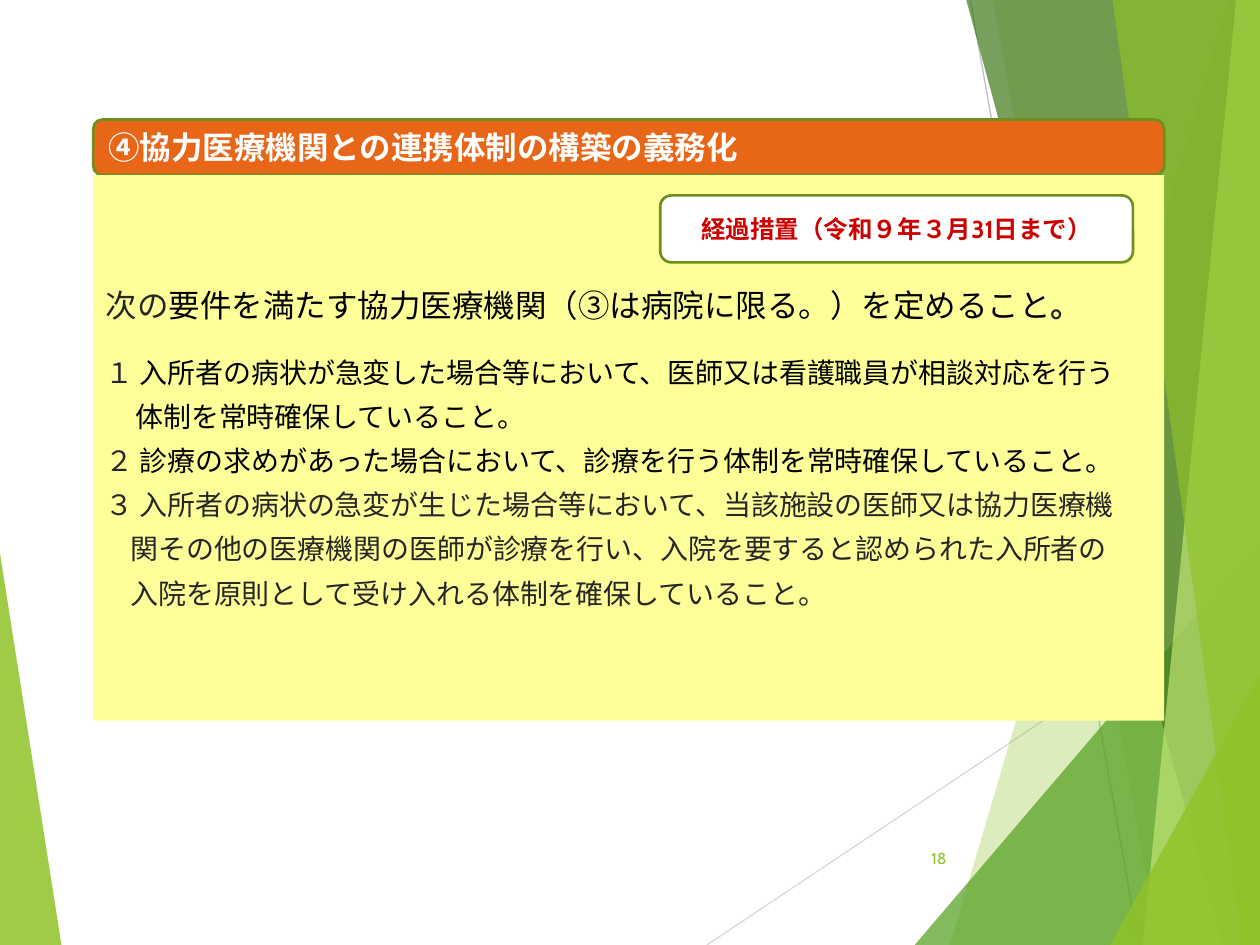
from lxml import etree
from pptx import Presentation
from pptx.dml.color import RGBColor
from pptx.enum.shapes import MSO_CONNECTOR, MSO_SHAPE
from pptx.enum.text import MSO_ANCHOR, PP_ALIGN
from pptx.oxml.ns import qn
from pptx.util import Cm, Pt

RECT, ROUNDED = MSO_SHAPE.RECTANGLE, MSO_SHAPE.ROUNDED_RECTANGLE
STRAIGHT = MSO_CONNECTOR.STRAIGHT
MIDDLE = MSO_ANCHOR.MIDDLE
LEFT, CENTER, RIGHT = PP_ALIGN.LEFT, PP_ALIGN.CENTER, PP_ALIGN.RIGHT

WIDTH, HEIGHT = 25.4, 19.05
GREEN, LIME, OLIVE = "90C226", "C0E474", "6B901C"
WHITE, BLACK, DARK = "FFFFFF", "000000", "262626"
SANS, HUMANIST = "Arial", "Cabin"


def color(hex_text):
    return RGBColor.from_string(hex_text)


class SlideBuilder:
    def __init__(self, slide):
        self.slide = slide
        self.shapes = slide.shapes

    def facet(self, top_x, top_y, bottom_x, edge_x, fill, opacity):
        """A see-through panel between a slanted side and a slide edge."""
        corners = [(bottom_x, HEIGHT), (edge_x, HEIGHT), (edge_x, top_y)]
        outline = self.shapes.build_freeform(Cm(top_x), Cm(top_y), scale=1.0)
        outline.add_line_segments([(Cm(x), Cm(y)) for x, y in corners])
        panel = outline.convert_to_shape()
        self.paint(panel, fill)
        tint = panel._element.spPr.find(qn("a:solidFill"))[0]
        etree.SubElement(tint, qn("a:alpha"), val=str(opacity * 1000))

    def hairline(self, x1, y1, x2, y2, line):
        hairline = self.shapes.add_connector(
            STRAIGHT, Cm(x1), Cm(y1), Cm(x2), Cm(y2))
        hairline.line.color.rgb = color(line)
        hairline.line.width = Pt(0.75)
        etree.SubElement(hairline._element.spPr, qn("a:effectLst"))

    def box(self, kind, place, fill, line=None):
        box = self.shapes.add_shape(kind, *map(Cm, place))
        self.paint(box, fill, line)
        return self.prepare(box.text_frame)

    def text_box(self, place):
        return self.prepare(self.shapes.add_textbox(*map(Cm, place)).text_frame)

    def paint(self, shape, fill, line=None):
        shape.shadow.inherit = False
        shape.fill.solid()
        shape.fill.fore_color.rgb = color(fill)
        if line:
            shape.line.color.rgb = color(line)
            shape.line.width = Pt(1.5)
        else:
            shape.line.fill.background()

    def prepare(self, frame):
        frame.word_wrap = True
        frame.vertical_anchor = MIDDLE
        return frame

    def fill_paragraph(self, paragraph, pieces, size, align=LEFT, after=0, indent=0):
        """Each piece is (text, font, colour, bold)."""
        paragraph.alignment = align
        paragraph.space_after = Pt(after)
        if indent:
            paragraph._p.get_or_add_pPr().set("marL", str(Cm(indent)))
        for text, font, ink, bold in pieces:
            run = paragraph.add_run()
            run.text = text
            run.font.name = font
            run.font.size = Pt(size)
            run.font.bold = bold
            run.font.color.rgb = color(ink)


def main():
    deck = Presentation()
    deck.slide_width, deck.slide_height = Cm(WIDTH), Cm(HEIGHT)
    page = SlideBuilder(deck.slides.add_slide(deck.slide_layouts[6]))

    # Background facets
    page.facet(0, 11.15, 1.24, 0, GREEN, 85)
    page.hairline(14.25, HEIGHT, WIDTH, 11.61, "D9D9D9")
    page.hairline(19.56, 0, 22.96, HEIGHT, "BFBFBF")
    right_facets = [
        (24.77, 0, 19.15, GREEN, 30),
        (20.02, 0, 23.34, GREEN, 20),
        (WIDTH, 10.9, 18.44, "54A021", 72),
        (19.48, 0, 24.64, "3F7819", 70),
        (24.92, 0, 23.04, LIME, 70),
        (22.43, 0, 25.04, GREEN, 65),
        (WIDTH, 13.59, 22.38, GREEN, 80),
    ]
    for top_x, top_y, bottom_x, fill, opacity in right_facets:
        page.facet(top_x, top_y, bottom_x, WIDTH, fill, opacity)

    # Page number
    number = page.text_box((17.91, 16.79, 1.42, 1.02))
    page.fill_paragraph(number.paragraphs[0], [("18", HUMANIST, GREEN, False)], 9, RIGHT)

    # Heading
    heading = page.box(ROUNDED, (1.88, 2.41, 21.59, 1.12), "E76618", OLIVE)
    page.fill_paragraph(
        heading.paragraphs[0],
        [("④協力医療機関との連携体制の構築の義務化", SANS, WHITE, True)], 18)

    # Requirements
    requirements = page.box(RECT, (1.88, 3.53, 21.59, 11), "FFFF99")
    page.fill_paragraph(requirements.paragraphs[0], [
        ("次の", SANS, DARK, False),
        ("要件を満たす協力医療機関（③は病院に限る。）を定めること", HUMANIST, BLACK, False),
        ("。", SANS, DARK, True),
    ], 18, after=18)
    items = [
        (0, "１ ", "入所者の病状が急変した場合等において、医師又は看護職員が相談対応を行う", HUMANIST, BLACK),
        (0.6, "", "体制を常時確保していること。", HUMANIST, BLACK),
        (0, "２ ", "診療の求めがあった場合において、診療を行う体制を常時確保していること。", HUMANIST, BLACK),
        (0, "３ ", "入所者の病状の急変が生じた場合等において、当該施設の医師又は協力医療機", SANS, DARK),
        (0.5, "", "関その他の医療機関の医師が診療を行い、入院を要すると認められた入所者の", SANS, DARK),
        (0.5, "", "入院を原則として受け入れる体制を確保していること。", SANS, DARK),
    ]
    for indent, label, text, font, ink in items:
        pieces = [(label, SANS, DARK, False)] if label else []
        pieces.append((text, font, ink, False))
        page.fill_paragraph(requirements.add_paragraph(), pieces, 16, after=6, indent=indent)

    # Transitional measure
    transition = page.box(ROUNDED, (13.31, 3.94, 9.53, 1.35), WHITE, OLIVE)
    page.fill_paragraph(
        transition.paragraphs[0],
        [("経過措置（令和９年３月31日まで）", HUMANIST, "CC0000", True)], 14, CENTER)

    deck.save("out.pptx")


if __name__ == "__main__":
    main()
